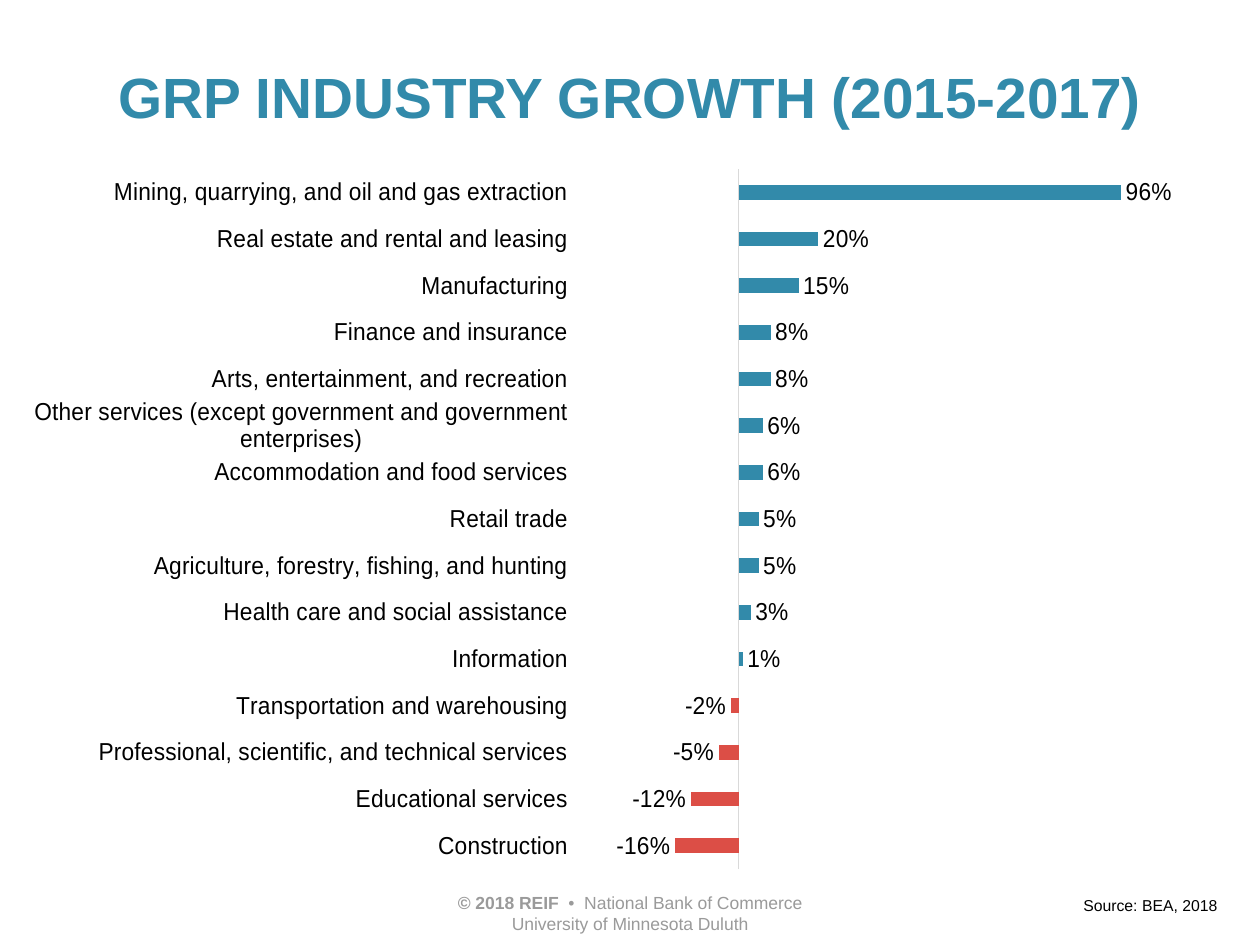
"""Build the GRP industry growth slide."""
from dataclasses import dataclass
from typing import NamedTuple

from lxml import etree
from pptx import Presentation
from pptx import util as u
from pptx.chart import data as chart_data
from pptx.dml.color import RGBColor
from pptx.enum import chart as chart_enum
from pptx.enum import text
from pptx.oxml.ns import qn


@dataclass(frozen=True)
class Theme:
    font: str = "Arial"
    teal: str = "328AAA"
    red: str = "DC4E46"
    black: str = "000000"
    gray: str = "9A9A9A"
    axis: str = "D9D9D9"
    title_size: float = 32.4
    chart_size: float = 14
    footer_size: float = 10
    source_size: float = 9


class Span(NamedTuple):
    words: str
    bold: bool = False


class Block(NamedTuple):
    left: float
    top: float
    width: float
    height: float
    size: float
    color: str
    align: text.PP_ALIGN
    paragraphs: list[list[Span]]
    anchor: text.MSO_ANCHOR = text.MSO_ANCHOR.TOP
    line_spacing: float = 1.0


class Industry(NamedTuple):
    name: str
    growth: float


THEME = Theme()

BLOCKS = [
    Block(1.75, 1.02, 21.89, 2.01, THEME.title_size, THEME.teal, text.PP_ALIGN.CENTER,
          [[Span("GRP INDUSTRY GROWTH (2015-2017)", True)]], text.MSO_ANCHOR.MIDDLE, 0.9),
    Block(8.65, 17.86, 8.1, 1.12, THEME.footer_size, THEME.gray, text.PP_ALIGN.CENTER,
          [[Span("© 2018 REIF  ", True), Span("•  National Bank of Commerce")],
           [Span("University of Minnesota Duluth")]]),
    Block(21.59, 17.93, 3.51, 0.64, THEME.source_size, THEME.black, text.PP_ALIGN.LEFT,
          [[Span("Source: BEA, 2018")]]),
]

INDUSTRIES = [
    Industry("Construction", -0.16),
    Industry("Educational services", -0.12),
    Industry("Professional, scientific, and technical services", -0.05),
    Industry("Transportation and warehousing", -0.02),
    Industry("Information", 0.01),
    Industry("Health care and social assistance", 0.03),
    Industry("Agriculture, forestry, fishing, and hunting", 0.05),
    Industry("Retail trade", 0.05),
    Industry("Accommodation and food services", 0.06),
    Industry("Other services (except government and government enterprises)", 0.06),
    Industry("Arts, entertainment, and recreation", 0.08),
    Industry("Finance and insurance", 0.08),
    Industry("Manufacturing", 0.15),
    Industry("Real estate and rental and leasing", 0.2),
    Industry("Mining, quarrying, and oil and gas extraction", 0.96),
]


def style_font(font, size: float, color: str, bold: bool = False) -> None:
    """Apply the theme typeface with a size, colour and weight."""
    font.name = THEME.font
    font.size = u.Pt(size)
    font.bold = bold
    font.color.rgb = RGBColor.from_string(color)


def draw_block(page, block: Block) -> None:
    """Draw one text box run by run."""
    box = page.shapes.add_textbox(u.Cm(block.left), u.Cm(block.top),
                                  u.Cm(block.width), u.Cm(block.height))
    frame = box.text_frame
    frame.word_wrap = True
    frame.vertical_anchor = block.anchor
    for index, spans in enumerate(block.paragraphs):
        para = frame.add_paragraph() if index else frame.paragraphs[0]
        para.alignment = block.align
        para.line_spacing = block.line_spacing
        for span in spans:
            run = para.add_run()
            run.text = span.words
            style_font(run.font, block.size, block.color, span.bold)


def place_plot(chart, left: float, top: float, width: float, height: float) -> None:
    """Fix the inner plot area as fractions of the chart."""
    area = chart.plots[0]._element.getparent()
    for old in area.findall(qn("c:layout")):
        area.remove(old)
    layout = etree.Element(qn("c:layout"))
    manual = etree.SubElement(layout, qn("c:manualLayout"))
    settings = {"layoutTarget": "inner", "xMode": "edge", "yMode": "edge",
                "x": left, "y": top, "w": width, "h": height}
    for tag, value in settings.items():
        etree.SubElement(manual, qn(f"c:{tag}")).set("val", str(value))
    area.insert(0, layout)


def draw_chart(page, industries: list[Industry]) -> None:
    """Draw the growth bars, with declines in red."""
    content = chart_data.CategoryChartData(number_format="0%")
    content.categories = [industry.name for industry in industries]
    content.add_series("Series 1", [industry.growth for industry in industries])
    chart = page.shapes.add_chart(chart_enum.XL_CHART_TYPE.BAR_CLUSTERED, u.Cm(0.69), u.Cm(2.96),
                                  u.Cm(24.29), u.Cm(14.86), content).chart
    chart.has_legend = False
    chart.has_title = False
    style_font(chart.font, THEME.chart_size, THEME.black)
    place_plot(chart, 0.41, 0.03, 0.57, 0.95)

    categories = chart.category_axis
    categories.tick_label_position = chart_enum.XL_TICK_LABEL_POSITION.LOW
    categories.major_tick_mark = chart_enum.XL_TICK_MARK.NONE
    categories.format.line.color.rgb = RGBColor.from_string(THEME.axis)
    categories.format.line.width = u.Pt(0.75)
    values = chart.value_axis
    values.visible = False
    values.has_major_gridlines = False
    values.minimum_scale, values.maximum_scale = -0.4, 1.2

    plot = chart.plots[0]
    plot.gap_width = 219
    plot.vary_by_categories = False
    series = plot.series[0]
    series.invert_if_negative = False
    series.format.fill.solid()
    series.format.fill.fore_color.rgb = RGBColor.from_string(THEME.teal)
    for index, industry in enumerate(industries):
        if industry.growth < 0:
            fill = series.points[index].format.fill
            fill.solid()
            fill.fore_color.rgb = RGBColor.from_string(THEME.red)
    labels = series.data_labels
    labels.show_value = True
    labels.number_format = "0%"
    labels.number_format_is_linked = False
    labels.position = chart_enum.XL_LABEL_POSITION.OUTSIDE_END
    style_font(labels.font, THEME.chart_size, THEME.black)


def main() -> None:
    """Assemble and save the deck."""
    deck = Presentation()
    deck.slide_width, deck.slide_height = u.Cm(25.4), u.Cm(19.05)
    page = deck.slides.add_slide(deck.slide_layouts[6])
    draw_chart(page, INDUSTRIES)
    for block in BLOCKS:
        draw_block(page, block)
    deck.save("out.pptx")


if __name__ == "__main__":
    main()
